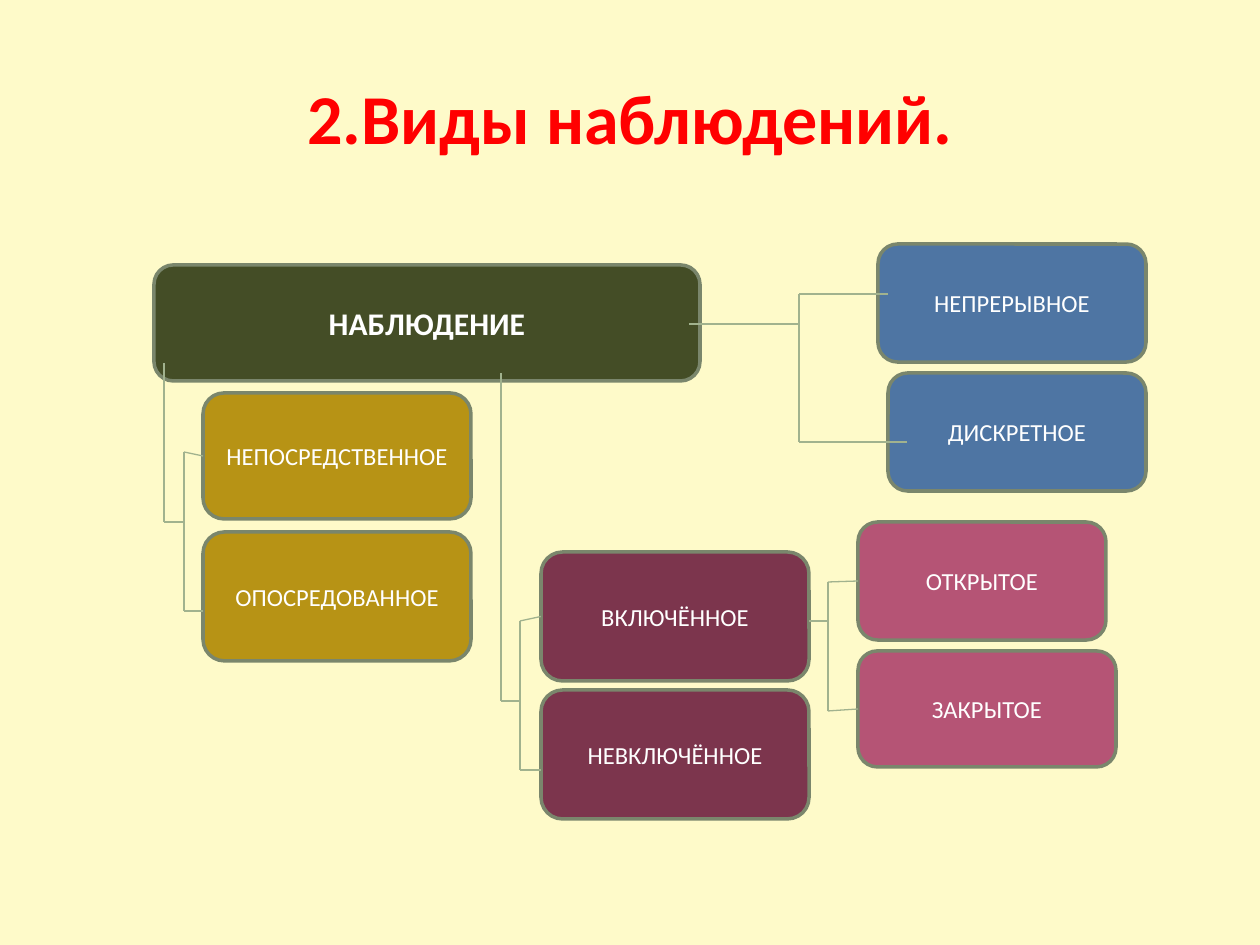
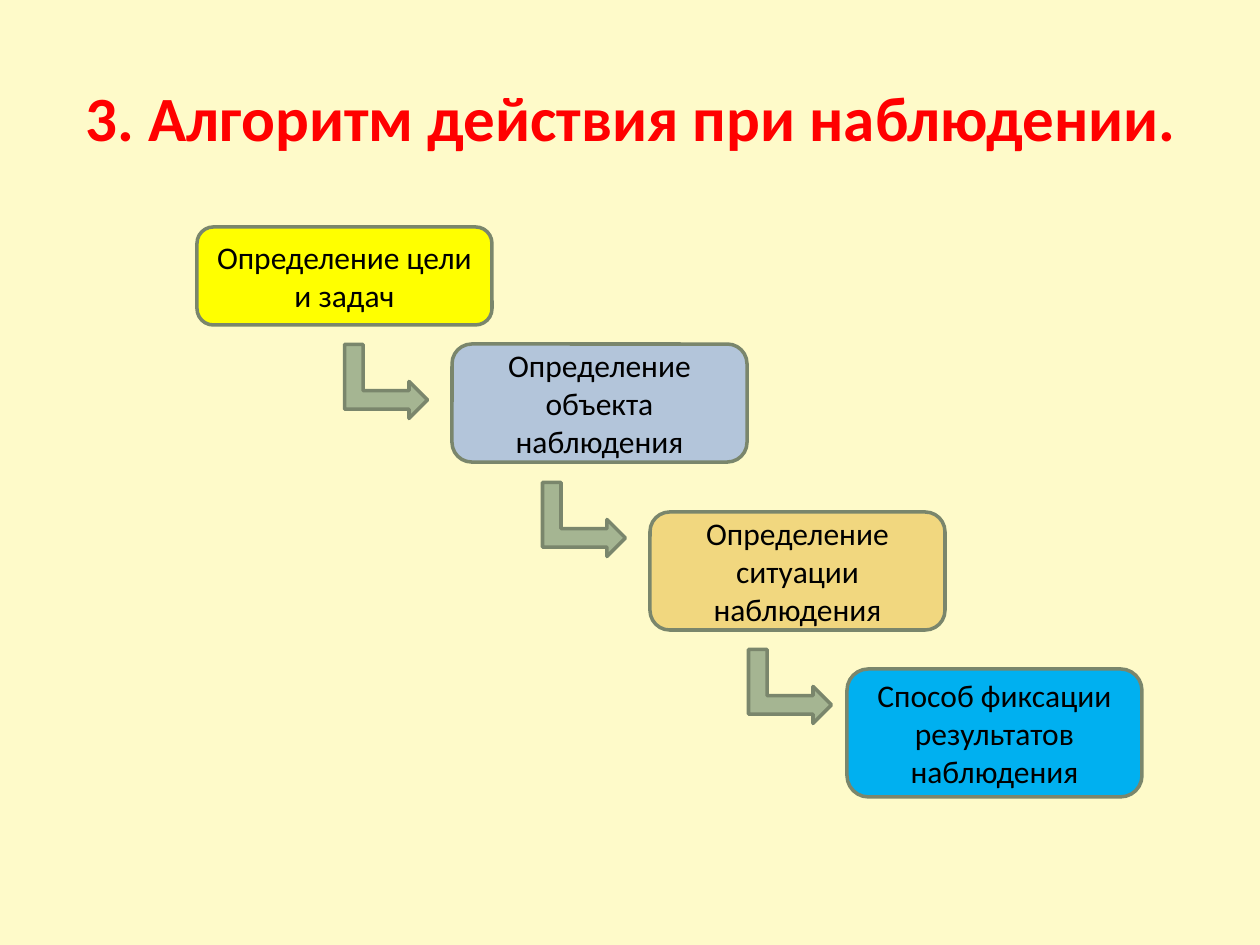
from itertools import pairwise
from lxml.etree import SubElement
from pptx import Presentation
from pptx.dml.color import RGBColor
from pptx.enum.shapes import MSO_CONNECTOR, MSO_SHAPE
from pptx.enum.text import MSO_ANCHOR, PP_ALIGN
from pptx.oxml.ns import qn
from pptx.util import Emu, Pt

SCALE = 914400 / 126
CREAM = RGBColor(0xFE, 0xFA, 0xC9)
RED = RGBColor(0xFF, 0x00, 0x00)
WHITE = RGBColor(0xFF, 0xFF, 0xFF)
BLACK = RGBColor(0x00, 0x00, 0x00)
EDGE = RGBColor(0x7A, 0x86, 0x6C)
LINK = RGBColor(0xA1, 0xB2, 0x8E)
SAGE = RGBColor(0xA5, 0xB5, 0x92)
OLIVE = RGBColor(0x44, 0x4D, 0x26)
WINE = RGBColor(0x7C, 0x35, 0x4D)
GOLD = RGBColor(0xB7, 0x93, 0x15)
ROSE = RGBColor(0xB5, 0x54, 0x75)
BLUE = RGBColor(0x4E, 0x75, 0xA3)
YELLOW = RGBColor(0xFF, 0xFF, 0x00)
MIST = RGBColor(0xB3, 0xC5, 0xDA)
SAND = RGBColor(0xF1, 0xD7, 0x7F)
SKY = RGBColor(0x00, 0xB0, 0xF0)


def write(shape, text, size=14, color=WHITE, bold=False):
    frame = shape.text_frame
    frame.word_wrap = True
    frame.vertical_anchor = MSO_ANCHOR.MIDDLE
    para = frame.paragraphs[0]
    para.alignment = PP_ALIGN.CENTER
    run = para.add_run()
    run.text = text
    run.font.name = "Calibri"
    run.font.size = Pt(size)
    run.font.bold = bold
    run.font.color.rgb = color


def draw(slide, kind, place, fill):
    shape = slide.shapes.add_shape(kind, *[Emu(round(n * SCALE)) for n in place])
    shape.shadow.inherit = False
    shape.fill.solid()
    shape.fill.fore_color.rgb = fill
    shape.line.color.rgb = EDGE
    shape.line.width = Pt(2)
    return shape


deck = Presentation()
deck.slide_width = Emu(round(1260 * SCALE))
deck.slide_height = Emu(round(945 * SCALE))
back = deck.slide_master.background.fill
back.solid()
back.fore_color.rgb = CREAM

slides = []
for text, size, left, top in [
    ("2.Виды наблюдений.", 40, 63, 38),
    ("3. Алгоритм действия при наблюдении.", 36, 64, 37),
]:
    slide = deck.slides.add_slide(deck.slide_layouts[5])
    title = slide.shapes.title
    title.left, title.top, title.width, title.height = [
        Emu(round(n * SCALE)) for n in (left, top, 1134, 158)
    ]
    write(title, text, size=size, color=RED, bold=True)
    slides.append(slide)
kinds, steps = slides

root = draw(kinds, MSO_SHAPE.ROUNDED_RECTANGLE, (154, 265, 546, 116), OLIVE)
write(root, "НАБЛЮДЕНИЕ", size=18, bold=True)

cards = {}
for text, place, fill in [
    ("ВКЛЮЧЁННОЕ", (541, 552, 268, 129), WINE),
    ("ОПОСРЕДОВАННОЕ", (203, 532, 268, 129), GOLD),
    ("ЗАКРЫТОЕ", (858, 651, 258, 116), ROSE),
    ("НЕВКЛЮЧЁННОЕ", (541, 690, 268, 129), WINE),
    ("ДИСКРЕТНОЕ", (888, 373, 258, 118), BLUE),
    ("НЕПРЕРЫВНОЕ", (878, 244, 268, 118), BLUE),
    ("ОТКРЫТОЕ", (858, 522, 248, 118), ROSE),
    ("НЕПОСРЕДСТВЕННОЕ", (203, 393, 268, 126), GOLD),
]:
    cards[text] = draw(kinds, MSO_SHAPE.ROUNDED_RECTANGLE, place, fill)
    write(cards[text], text)

for points, goal in [
    ([(689, 324), (799, 324)], None),
    ([(888, 294), (799, 294), (799, 442), (907, 442)], None),
    ([(164, 363), (164, 522), (184, 522)], None),
    ([(203, 611), (184, 611), (184, 452), (203, 456)], "НЕПОСРЕДСТВЕННОЕ"),
    ([(501, 373), (501, 701), (520, 701)], None),
    ([(541, 770), (520, 770), (520, 621), (541, 616)], "ВКЛЮЧЁННОЕ"),
    ([(809, 621), (828, 621), (828, 582), (858, 581)], "ОТКРЫТОЕ"),
    ([(828, 621), (828, 711), (858, 709)], "ЗАКРЫТОЕ"),
]:
    for start, end in pairwise(points):
        link = kinds.shapes.add_connector(
            MSO_CONNECTOR.STRAIGHT, *[Emu(round(n * SCALE)) for n in start + end]
        )
        link.line.color.rgb = LINK
        link.line.width = Pt(0.75)
        SubElement(link._element.spPr, qn("a:effectLst"))
    if goal:
        link.end_connect(cards[goal], 1)

for text, place, fill in [
    ("Определение цели и задач", (197, 227, 295, 98), YELLOW),
    ("Определение объекта наблюдения", (452, 344, 295, 118), MIST),
    ("Определение ситуации наблюдения", (650, 512, 295, 118), SAND),
    ("Способ фиксации результатов наблюдения", (847, 669, 295, 128), SKY),
]:
    card = draw(steps, MSO_SHAPE.ROUNDED_RECTANGLE, place, fill)
    write(card, text, size=18, color=BLACK)

for left, top in [(349, 340), (547, 478), (753, 645)]:
    arrow = draw(steps, MSO_SHAPE.BENT_UP_ARROW, (left, top, 74, 83), SAGE)
    arrow.rotation = 90

deck.save("out.pptx")
